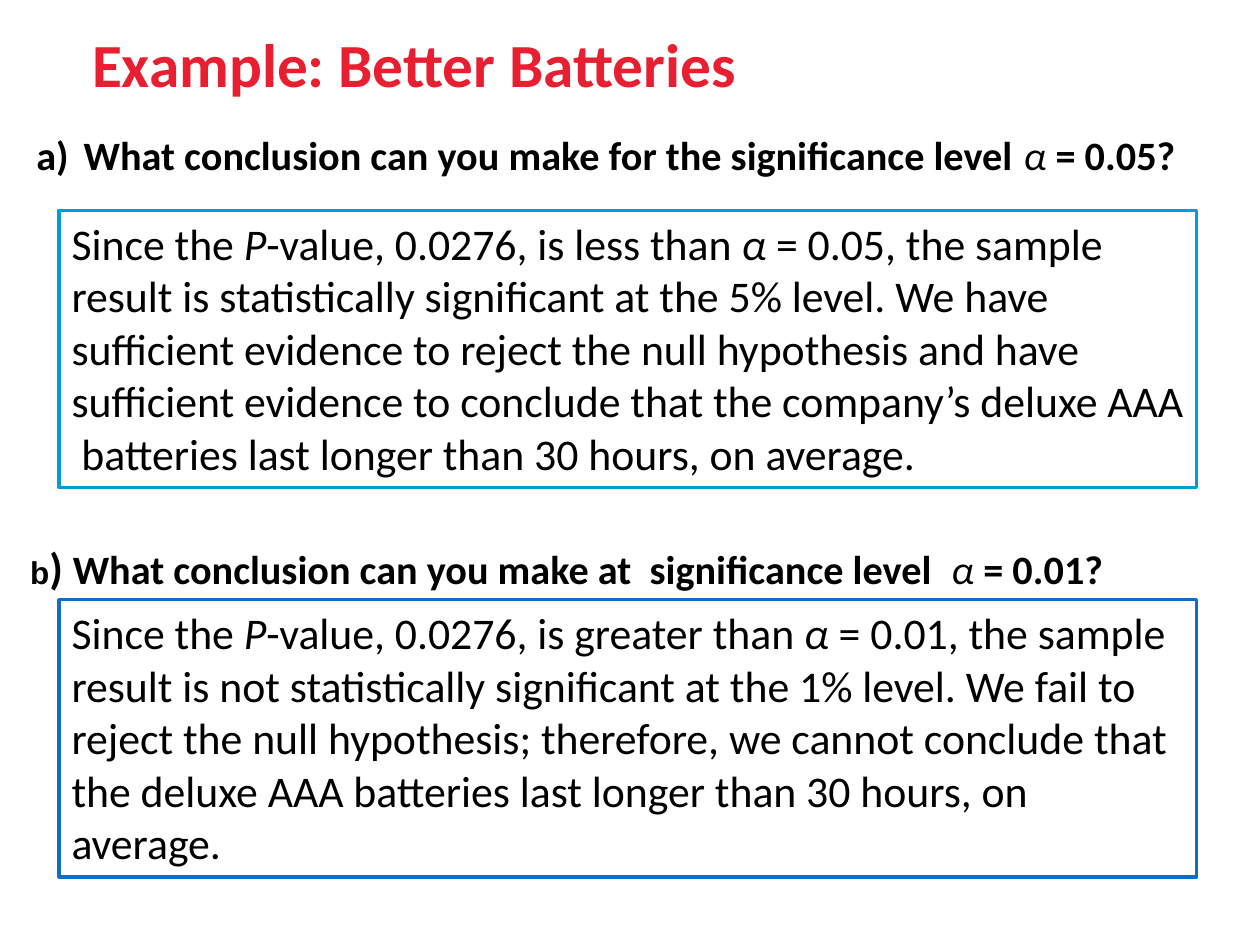
import pptx
import pptx.util
import pptx.dml.color
import pptx.enum.shapes
import pptx.enum.text
import pptx.oxml.ns
import lxml.etree

Pt = pptx.util.Pt
RGBColor = pptx.dml.color.RGBColor
ANCHOR = pptx.enum.text.MSO_ANCHOR
ALIGN = pptx.enum.text.PP_ALIGN

RED = RGBColor(0xE8, 0x1F, 0x30)
BLACK = RGBColor(0, 0, 0)
WHITE = RGBColor(0xFF, 0xFF, 0xFF)
CYAN = RGBColor(0x00, 0x9D, 0xD9)
BLUE = RGBColor(0x0F, 0x6F, 0xC6)

TITLE = [("Example: Better Batteries", {"size": Pt(35), "bold": True})]
BOLD = {"size": Pt(23), "bold": True}
SYMBOL = {"size": Pt(23), "italic": True}
ITALIC = {"italic": True}

QUESTIONS = [
    {"at": (13.7, 70.6, 670, 35), "numbered": True, "runs": [
        ("What conclusion can you make for the significance level ", BOLD),
        ("α ", SYMBOL),
        ("= 0.05?", BOLD)]},
    {"at": (10.1, 305.3, 674, 37.4), "numbered": False, "runs": [
        ("b", {"size": Pt(18), "bold": True, "name": "Arial"}),
        (") ", {"size": Pt(25), "bold": True}),
        ("What conclusion can you make at  significance level  ", BOLD),
        ("α ", SYMBOL),
        ("= 0.01?", BOLD)]},
]

ANSWERS = [
    {"top": 120.2, "line": CYAN, "runs": [
        ("Since the ", {}),
        ("P", ITALIC),
        ("-value, 0.0276, is less than ", {}),
        ("α", ITALIC),
        (" = 0.05, the sample result is statistically significant at the 5% level. "
         "We have sufficient evidence to reject the null hypothesis and have "
         "sufficient evidence to conclude that the company’s deluxe AAA  batteries "
         "last longer than 30 hours, on average.", {})]},
    {"top": 342.7, "line": BLUE, "runs": [
        ("Since the ", {}),
        ("P", ITALIC),
        ("-value, 0.0276, is greater than ", {}),
        ("α ", ITALIC),
        ("= 0.01, the sample result is not statistically significant at the 1% level. "
         "We fail to reject the null hypothesis; therefore, we cannot conclude that "
         "the deluxe AAA batteries last longer than 30 hours, on average.", {})]},
]
ANSWER_LEFT, ANSWER_WIDTH, ANSWER_HEIGHT = 33.8, 650, 158.4
HANGING = Pt(27)


def write(sp, runs, color=BLACK):
    tf = sp.text_frame
    for key, value in {"word_wrap": True, "vertical_anchor": ANCHOR.TOP,
                       "auto_size": pptx.enum.text.MSO_AUTO_SIZE.NONE}.items():
        setattr(tf, key, value)
    p = tf.paragraphs[0]
    p.alignment = ALIGN.LEFT
    for text, extra in runs:
        r = p.add_run()
        r.text = text
        r.font.color.rgb = color
        base = {"name": "Calibri", "size": Pt(25), "bold": False, "italic": False}
        for key, value in {**base, **extra}.items():
            setattr(r.font, key, value)
    return p


def add_title(s):
    sp = s.shapes.title
    for key, value in {"left": Pt(45.4), "top": Pt(11.5),
                       "width": Pt(607), "height": Pt(60)}.items():
        setattr(sp, key, value)
    write(sp, TITLE, RED)


def add_question(s, question):
    sp = s.shapes.add_textbox(*map(Pt, question["at"]))
    p = write(sp, question["runs"])
    p.space_after = Pt(18)
    pPr = p._p.get_or_add_pPr()
    pPr.set("marL", str(HANGING))
    pPr.set("indent", str(-HANGING))
    if question["numbered"]:
        bullet = lxml.etree.SubElement(pPr, pptx.oxml.ns.qn("a:buAutoNum"))
        bullet.set("type", "alphaLcParenR")


def add_answer(s, answer):
    sp = s.shapes.add_shape(
        pptx.enum.shapes.MSO_SHAPE.RECTANGLE, Pt(ANSWER_LEFT), Pt(answer["top"]),
        Pt(ANSWER_WIDTH), Pt(ANSWER_HEIGHT))
    sp.shadow.inherit = False
    sp.fill.solid()
    sp.fill.fore_color.rgb = WHITE
    sp.line.color.rgb = answer["line"]
    sp.line.width = Pt(2)
    write(sp, answer["runs"])


def main():
    prs = pptx.Presentation()
    prs.slide_width, prs.slide_height = Pt(720), Pt(540)
    s = prs.slides.add_slide(prs.slide_layouts.get_by_name("Title Only"))
    add_title(s)
    for question in QUESTIONS:
        add_question(s, question)
    for answer in ANSWERS:
        add_answer(s, answer)
    prs.save("out.pptx")


if __name__ == "__main__":
    main()
